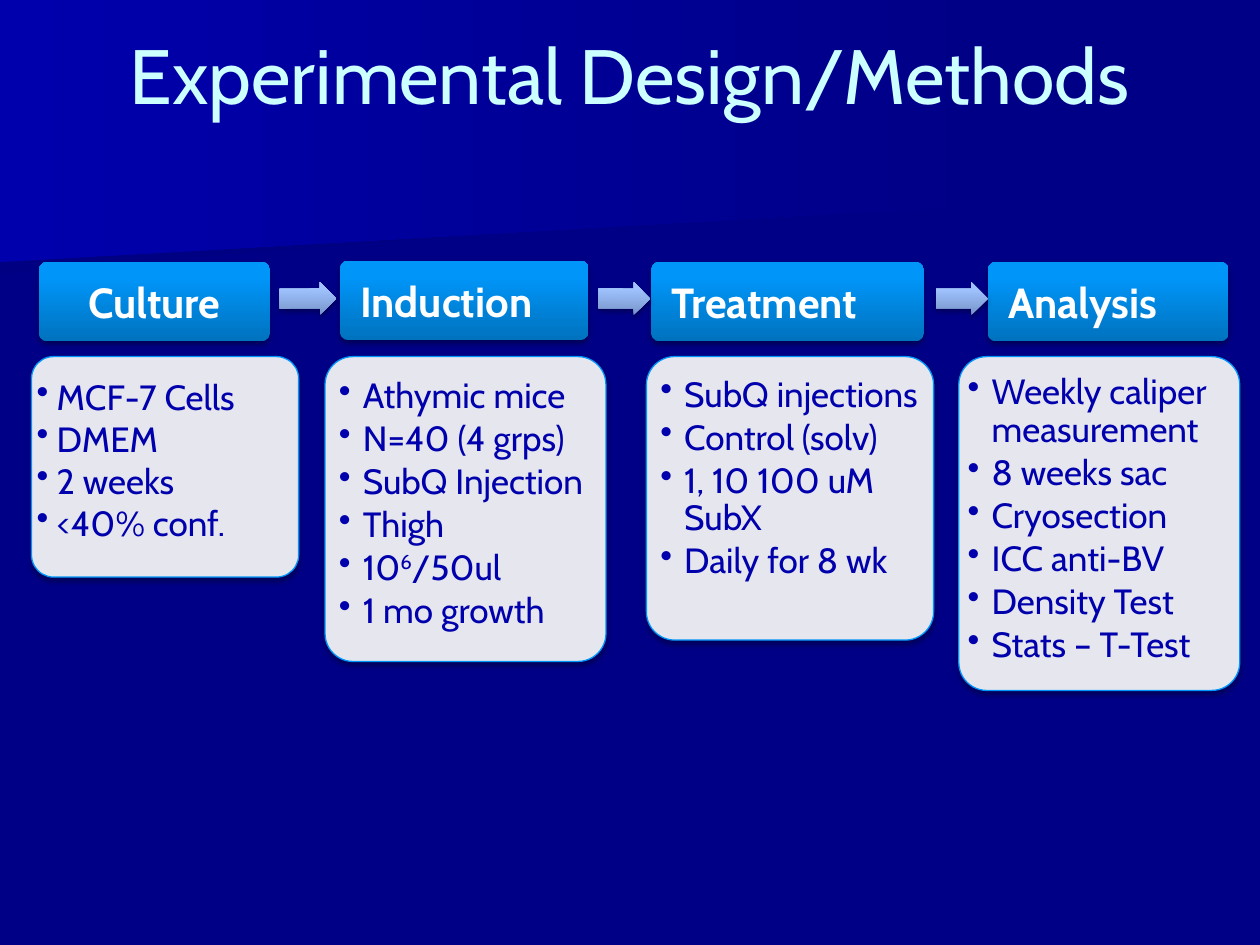
from typing import NamedTuple

from lxml import etree
from pptx import Presentation
from pptx.dml.color import RGBColor
from pptx.enum.shapes import MSO_SHAPE
from pptx.enum.text import MSO_ANCHOR, PP_ALIGN
from pptx.oxml import parse_xml
from pptx.oxml.ns import nsdecls, qn
from pptx.util import Inches, Pt

ROUND, ARROW = MSO_SHAPE.ROUNDED_RECTANGLE, MSO_SHAPE.RIGHT_ARROW
LEFT, CENTER = PP_ALIGN.LEFT, PP_ALIGN.CENTER
TOP, MIDDLE = MSO_ANCHOR.TOP, MSO_ANCHOR.MIDDLE

FONT = "Cabin"
NAVY = RGBColor(0x00, 0x00, 0x86)
DARK = RGBColor(0x00, 0x00, 0x83)
ROYAL = RGBColor(0x00, 0x00, 0xAC)
PALE = RGBColor(0xCC, 0xFF, 0xFF)
WHITE = RGBColor(0xFF, 0xFF, 0xFF)
EDGE = RGBColor(0x00, 0x96, 0xF9)
BLUES = (RGBColor(0x00, 0x72, 0xBE), RGBColor(0x00, 0x95, 0xF8))
GREYS = (RGBColor(0x76, 0x94, 0xC8), RGBColor(0xA0, 0xC3, 0xFF))


class Box(NamedTuple):
    x: float
    y: float
    w: float
    h: float

    def emu(self) -> list:
        return [Inches(v) for v in self]


class Stage(NamedTuple):
    name: str
    head: Box
    card: Box
    body: Box
    items: tuple      # text between carets is raised
    align: int = LEFT
    pad: float = 0.12
    indent: float = 0.19
    line: float = 0.9
    after: float = 3


class Arrow(NamedTuple):
    box: Box
    turn: float


STAGES = (
    Stage("Culture", Box(0.31, 2.08, 1.83, 0.63), Box(0.25, 2.83, 2.12, 1.75),
          Box(0.25, 2.86, 1.99, 1.69),
          ("MCF-7 Cells", "DMEM", "2 weeks", "<40% conf."),
          align=CENTER, indent=0.16, line=1.0, after=0),
    Stage("Induction", Box(2.7, 2.07, 1.97, 0.63), Box(2.58, 2.83, 2.23, 2.42),
          Box(2.65, 2.88, 2.1, 2.37),
          ("Athymic mice", "N=40 (4 grps)", "SubQ Injection", "Thigh",
           "10^6^/50ul", "1 mo growth")),
    Stage("Treatment", Box(5.17, 2.08, 2.16, 0.63), Box(5.13, 2.83, 2.28, 2.25),
          Box(5.2, 2.87, 2.15, 1.79),
          ("SubQ injections", "Control (solv)", "1, 10 100 uM SubX",
           "Daily for 8 wk")),
    Stage("Analysis", Box(7.84, 2.08, 1.91, 0.63), Box(7.61, 2.83, 2.23, 2.65),
          Box(7.64, 2.93, 2.03, 2.57),
          ("Weekly caliper measurement", "8 weeks sac", "Cryosection",
           "ICC anti-BV", "Density Test", "Stats – T-Test"), pad=0.04),
)
ARROWS = (
    Arrow(Box(2.22, 2.24, 0.45, 0.26), 359.7),
    Arrow(Box(4.75, 2.24, 0.41, 0.26), 0.3),
    Arrow(Box(7.43, 2.24, 0.41, 0.26), 0),
)
BANDS = (
    (((7.78, 1.53), (0, 2.17), (0, 1.01), (7.79, 1.01), (7.78, 1.28)), DARK),
    (((7.92, 1.62), (0, 2.08), (0, 0), (7.92, 0)), ROYAL),
)


def blend(shape, pair: tuple, angle: float, end: float = 1.0) -> None:
    """Fill with a two-colour gradient."""
    shape.fill.gradient()
    shape.fill.gradient_angle = angle
    stops = shape.fill.gradient_stops
    for stop, color, place in zip(stops, pair, (0, end)):
        stop.color.rgb = color
        stop.position = place


def add_band(slide, points: tuple, color: RGBColor) -> None:
    spots = [(Inches(x), Inches(y)) for x, y in points]
    maker = slide.shapes.build_freeform(*spots[0], scale=1.0)
    maker.add_line_segments(spots[1:], close=True)
    band = maker.convert_to_shape()
    band.shadow.inherit = False
    band.line.fill.background()
    blend(band, (color, NAVY), 0)


def add_block(slide, kind: int, box: Box, *adj: float):
    """Add a preset shape with a soft shadow below it."""
    shape = slide.shapes.add_shape(kind, *box.emu())
    for i, value in enumerate(adj):
        shape.adjustments[i] = value
    shape.line.fill.background()
    shape.shadow.inherit = False
    shape._element.spPr.find(qn("a:effectLst")).append(parse_xml(
        f'<a:outerShdw {nsdecls("a")} blurRad="{Pt(3.1)}" dist="{Pt(1.8)}" '
        'dir="5400000" rotWithShape="0"><a:srgbClr val="000000">'
        '<a:alpha val="35000"/></a:srgbClr></a:outerShdw>'))
    return shape


def add_text(slide, box: Box, lines: tuple, *, size: float, color: RGBColor,
             bold: bool = False, align: int = LEFT, anchor: int = TOP,
             pads: tuple = (0.1, 0.05, 0.1, 0.05), line: float = 1.0,
             after: float = 0, indent: float = 0) -> None:
    """Write one paragraph per line; an indent brings bullets."""
    frame = slide.shapes.add_textbox(*box.emu()).text_frame
    frame.word_wrap = True
    frame.vertical_anchor = anchor
    (frame.margin_left, frame.margin_top, frame.margin_right,
     frame.margin_bottom) = [Inches(p) for p in pads]
    for n, text in enumerate(lines):
        para = frame.add_paragraph() if n else frame.paragraphs[0]
        para.alignment = align
        para.line_spacing = line
        para.space_after = Pt(after)
        if indent:
            props = para._p.get_or_add_pPr()
            props.set("marL", str(Inches(indent)))
            props.set("indent", str(-Inches(indent)))
            etree.SubElement(props, qn("a:buChar"), char="•")
        for i, part in enumerate(text.split("^")):
            run = para.add_run()
            run.text = part
            run.font.name = FONT
            run.font.size = Pt(size)
            run.font.bold = bold
            run.font.color.rgb = color
            if i % 2:
                run._r.get_or_add_rPr().set("baseline", "30000")


def add_head(slide, stage: Stage) -> None:
    blend(add_block(slide, ROUND, stage.head, 0.1), BLUES, 90, 0.8)
    add_text(slide, stage.head._replace(h=0.42), (stage.name,), size=24,
             color=WHITE, bold=True, align=stage.align, line=0.9,
             pads=(0.16, 0.16, 0.16, 0.08))


def add_card(slide, stage: Stage) -> None:
    card = add_block(slide, ROUND, stage.card, 0.1)
    card.fill.solid()
    card.fill.fore_color.rgb = WHITE
    tint = card._element.spPr.find(qn("a:solidFill"))[0]
    etree.SubElement(tint, qn("a:alpha"), val="90000")
    card.line.color.rgb = EDGE
    card.line.width = Pt(0.75)
    add_text(slide, stage.body, stage.items, size=20, color=ROYAL,
             pads=(0.04, stage.pad, 0.04, stage.pad), line=stage.line,
             after=stage.after, indent=stage.indent)


def add_arrow(slide, arrow: Arrow) -> None:
    shape = add_block(slide, ARROW, arrow.box, 0.6, 0.5)
    shape.rotation = arrow.turn
    blend(shape, GREYS, 90, 0.8)


def main() -> None:
    deck = Presentation()
    deck.slide_width, deck.slide_height = Inches(10), Inches(7.5)
    slide = deck.slides.add_slide(deck.slide_layouts[6])

    # Background
    slide.background.fill.solid()
    slide.background.fill.fore_color.rgb = NAVY
    for points, color in BANDS:
        add_band(slide, points, color)

    # Title
    add_text(slide, Box(0.5, 0, 9, 1.17), ("Experimental Design/Methods",),
             size=44, color=PALE, align=CENTER, anchor=MIDDLE)

    # Stages and the arrows between them
    for stage in STAGES:
        add_head(slide, stage)
    for arrow in ARROWS:
        add_arrow(slide, arrow)
    for stage in STAGES:
        add_card(slide, stage)

    deck.save("out.pptx")


if __name__ == "__main__":
    main()
